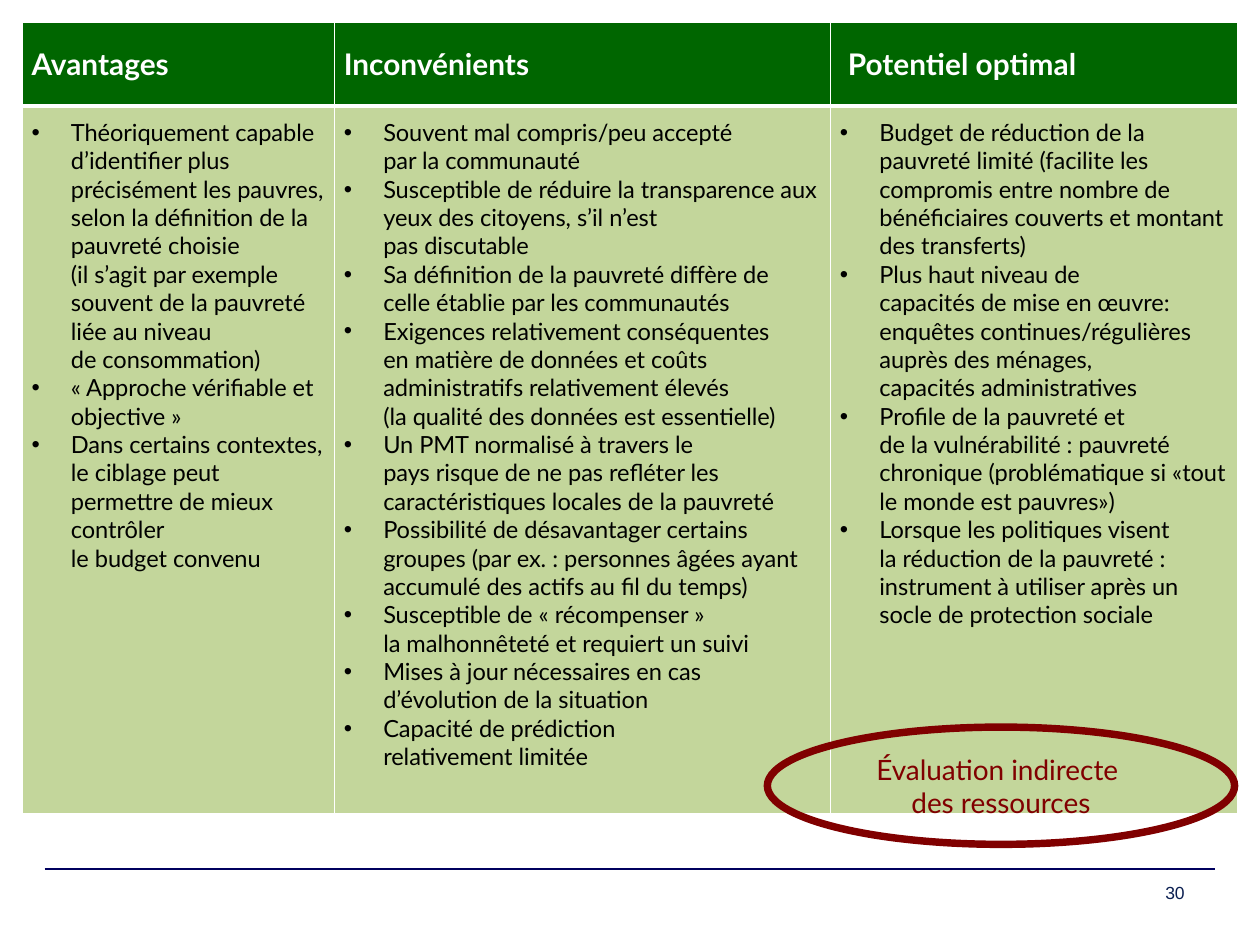
from dataclasses import dataclass

from lxml import etree
from pptx import Presentation
from pptx.dml.color import RGBColor
from pptx.enum import shapes, text
from pptx.oxml import ns
from pptx.util import Pt


@dataclass(frozen=True)
class Theme:
    font: str = "Lato"
    number_font: str = "Arial"
    header: str = "006600"
    body: str = "C3D69B"
    white: str = "FFFFFF"
    ink: str = "000000"
    accent: str = "800000"
    rule: str = "00005E"
    number: str = "0B1F51"
    header_size: float = 17
    body_size: float = 13.5
    callout_size: float = 16
    number_size: float = 10


THEME = Theme()
COLUMN_WIDTHS = (178.5, 283.5, 233)
ROW_HEIGHTS = (48, 404.5)
INDENT = 22.5

# Each column: heading, then its bullet points
COLUMNS = [
    ("Avantages", [
        "Théoriquement capable d’identifier plus précisément les pauvres, selon la "
        "définition de la pauvreté choisie \n(il s’agit par exemple souvent de la "
        "pauvreté liée au niveau \nde consommation)",
        "« Approche vérifiable et objective »",
        "Dans certains contextes, le ciblage peut permettre de mieux contrôler \n"
        "le budget convenu",
    ]),
    ("Inconvénients", [
        "Souvent mal compris/peu accepté \npar la communauté",
        "Susceptible de réduire la transparence aux yeux des citoyens, s’il n’est \n"
        "pas discutable",
        "Sa définition de la pauvreté diffère de celle établie par les communautés",
        "Exigences relativement conséquentes \nen matière de données et coûts "
        "administratifs relativement élevés \n(la qualité des données est essentielle)",
        "Un PMT normalisé à travers le \npays risque de ne pas refléter les "
        "caractéristiques locales de la pauvreté",
        "Possibilité de désavantager certains groupes (par ex. : personnes âgées "
        "ayant accumulé des actifs au fil du temps)",
        "Susceptible de « récompenser » \nla malhonnêteté et requiert un suivi",
        "Mises à jour nécessaires en cas d’évolution de la situation",
        "Capacité de prédiction \nrelativement limitée",
    ]),
    ("Potentiel optimal", [
        "Budget de réduction de la pauvreté limité (facilite les compromis entre "
        "nombre de bénéficiaires couverts et montant des transferts)",
        "Plus haut niveau de \ncapacités de mise en œuvre: enquêtes "
        "continues/régulières auprès des ménages, \ncapacités administratives",
        "Profile de la pauvreté et \nde la vulnérabilité : pauvreté chronique "
        "(problématique si «tout le monde est pauvres»)",
        "Lorsque les politiques visent \nla réduction de la pauvreté : instrument à "
        "utiliser après un socle de protection sociale",
    ]),
]


def rgb(color):
    return RGBColor.from_string(color)


def add_text(para, words, size, color, font=THEME.font, bold=False):
    """Add runs to a paragraph, one for each forced line."""
    for i, line in enumerate(words.split("\n")):
        if i:
            para.add_line_break()
        span = para.add_run()
        span.text = line
        span.font.name = font
        span.font.size = Pt(size)
        span.font.bold = bold
        span.font.color.rgb = rgb(color)


def set_indent(para, left, first=0):
    props = para._p.get_or_add_pPr()
    props.set("marL", str(Pt(left)))
    props.set("indent", str(Pt(first)))
    return props


def add_bullet(para):
    props = set_indent(para, INDENT, -INDENT)
    etree.SubElement(props, ns.qn("a:buFont")).set("typeface", "Arial")
    etree.SubElement(props, ns.qn("a:buChar")).set("char", "•")


def style_cell(cell, fill, top, bottom, margin_top):
    """Set white borders, then fill and margins."""
    props = cell._tc.get_or_add_tcPr()
    for side, width in (("L", 1), ("R", 1), ("T", top), ("B", bottom)):
        border = etree.SubElement(props, ns.qn(f"a:ln{side}"), w=str(Pt(width)))
        solid = etree.SubElement(border, ns.qn("a:solidFill"))
        etree.SubElement(solid, ns.qn("a:srgbClr"), val=THEME.white)
    cell.fill.solid()
    cell.fill.fore_color.rgb = rgb(fill)
    cell.margin_left = cell.margin_right = Pt(5.5)
    cell.margin_top, cell.margin_bottom = Pt(margin_top), Pt(2)


def fill_header(cell, heading, last):
    style_cell(cell, THEME.header, 1, 3, 10.75)
    para = cell.text_frame.paragraphs[0]
    para.line_spacing = 1.15
    para.alignment = text.PP_ALIGN.LEFT if last else text.PP_ALIGN.JUSTIFY
    if last:
        set_indent(para, 4.5)
    add_text(para, heading, THEME.header_size, THEME.white, bold=True)


def fill_list(cell, points):
    style_cell(cell, THEME.body, 3, 1, 7)
    frame = cell.text_frame
    for i, point in enumerate(points):
        para = frame.add_paragraph() if i else frame.paragraphs[0]
        add_bullet(para)
        add_text(para, point, THEME.body_size, THEME.ink)


def add_comparison(page):
    frame = page.shapes.add_table(2, len(COLUMNS), Pt(12.5), Pt(12.5),
                                  Pt(sum(COLUMN_WIDTHS)), Pt(sum(ROW_HEIGHTS)))
    table = frame.table
    for row, height in zip(table.rows, ROW_HEIGHTS):
        row.height = Pt(height)
    for i, (heading, points) in enumerate(COLUMNS):
        table.columns[i].width = Pt(COLUMN_WIDTHS[i])
        fill_header(table.cell(0, i), heading, i == len(COLUMNS) - 1)
        fill_list(table.cell(1, i), points)


def add_callout(page, words):
    oval = page.shapes.add_shape(shapes.MSO_SHAPE.OVAL,
                                 Pt(438.5), Pt(415.5), Pt(267), Pt(67))
    oval.shadow.inherit = False
    oval.fill.background()
    oval.line.color.rgb = rgb(THEME.accent)
    oval.line.width = Pt(4.25)
    oval.text_frame.vertical_anchor = text.MSO_ANCHOR.MIDDLE
    para = oval.text_frame.paragraphs[0]
    para.alignment = text.PP_ALIGN.CENTER
    add_text(para, words, THEME.callout_size, THEME.accent)


def add_rule(page):
    rule = page.shapes.add_connector(shapes.MSO_CONNECTOR.STRAIGHT,
                                     Pt(25.5), Pt(496.75), Pt(694.5), Pt(496.75))
    rule.line.color.rgb = rgb(THEME.rule)
    rule.line.width = Pt(1)
    etree.SubElement(rule._element.spPr, ns.qn("a:effectLst"))


def add_page_number(page, number):
    box = page.shapes.add_textbox(Pt(516), Pt(500.5), Pt(168), Pt(19))
    box.text_frame.word_wrap = True
    box.text_frame.vertical_anchor = text.MSO_ANCHOR.MIDDLE
    para = box.text_frame.paragraphs[0]
    para.alignment = text.PP_ALIGN.RIGHT
    add_text(para, number, THEME.number_size, THEME.number, THEME.number_font)


def main():
    deck = Presentation()
    deck.slide_width, deck.slide_height = Pt(720), Pt(540)
    page = deck.slides.add_slide(deck.slide_layouts[6])

    # Footer
    add_rule(page)
    add_page_number(page, "30")

    # Comparison table with the method named over its corner
    add_comparison(page)
    add_callout(page, "Évaluation indirecte \ndes ressources")

    deck.save("out.pptx")


if __name__ == "__main__":
    main()
